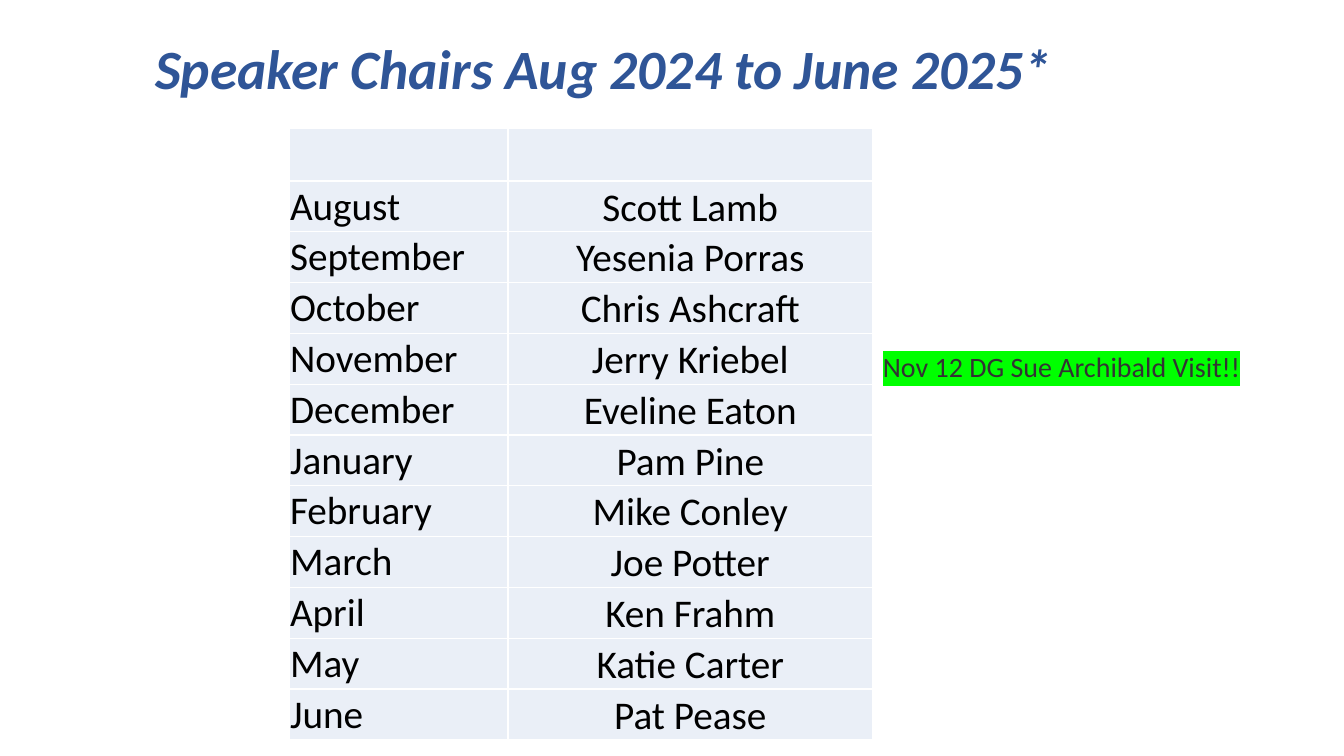
from dataclasses import dataclass

from lxml.etree import SubElement
from pptx import Presentation
from pptx.dml.color import RGBColor
from pptx.enum.text import MSO_ANCHOR, PP_ALIGN
from pptx.oxml.ns import qn
from pptx.util import Cm, Pt


@dataclass(frozen=True)
class Theme:
    """Colours, typeface and type sizes of the slide."""

    font: str = "Calibri"
    title_color: str = "2F5597"
    table_color: str = "000000"
    note_color: str = "333333"
    cell_fill: str = "EAEFF7"
    border: str = "FFFFFF"
    highlight: str = "00FF00"
    title_size: float = 39.6
    table_size: float = 28
    note_size: float = 20


THEME = Theme()

SPEAKER_CHAIRS = [
    ("August", "Scott Lamb"),
    ("September", "Yesenia Porras"),
    ("October", "Chris Ashcraft"),
    ("November", "Jerry Kriebel"),
    ("December", "Eveline Eaton"),
    ("January", "Pam Pine"),
    ("February", "Mike Conley"),
    ("March", "Joe Potter"),
    ("April", "Ken Frahm"),
    ("May", "Katie Carter"),
    ("June", "Pat Pease"),
]


def style_font(font, size, color):
    """Apply the theme typeface with a size and colour."""
    font.name = THEME.font
    font.size = Pt(size)
    font.color.rgb = RGBColor.from_string(color)


def add_text(slide, text, left, top, width, height, size, color):
    """Add a vertically centred text box and return its paragraph."""
    frame = slide.shapes.add_textbox(Cm(left), Cm(top), Cm(width), Cm(height)).text_frame
    frame.word_wrap = True
    frame.vertical_anchor = MSO_ANCHOR.MIDDLE
    paragraph = frame.paragraphs[0]
    paragraph.text = text
    paragraph.line_spacing = 0.9
    style_font(paragraph.font, size, color)
    return paragraph


def highlight_run(run, color):
    """Mark a run with a highlight colour."""
    highlight = SubElement(run.font._element, qn("a:highlight"))
    SubElement(highlight, qn("a:srgbClr"), val=color)


def style_cell(cell):
    """Give a cell its borders and fill."""
    properties = cell._tc.get_or_add_tcPr()
    for side in ("lnL", "lnR", "lnT", "lnB"):
        line = SubElement(properties, qn(f"a:{side}"), w=str(Pt(1)))
        fill = SubElement(line, qn("a:solidFill"))
        SubElement(fill, qn("a:srgbClr"), val=THEME.border)
    cell.fill.solid()
    cell.fill.fore_color.rgb = RGBColor.from_string(THEME.cell_fill)


def fill_cell(cell, text, anchor, alignment):
    """Write one text entry into a cell with tight margins."""
    cell.margin_left = cell.margin_right = cell.margin_top = Cm(0.02)
    cell.margin_bottom = 0
    cell.vertical_anchor = anchor
    paragraph = cell.text_frame.paragraphs[0]
    paragraph.text = text
    paragraph.alignment = alignment
    style_font(paragraph.font, THEME.table_size, THEME.table_color)


def add_chairs_table(slide, chairs):
    """Add the table of months and speaker chairs under an empty header row."""
    table = slide.shapes.add_table(
        len(chairs) + 1, 2, Cm(7.29), Cm(3.23), Cm(14.7), Cm(15.44)
    ).table
    table.first_row = table.horz_banding = False
    for column, width in zip(table.columns, (5.51, 9.19)):
        column.width = Cm(width)
    for index, row in enumerate(table.rows):
        row.height = Cm(1.28 if index else 1.33)
    for cell in table.iter_cells():
        style_cell(cell)
    for index, (month, chair) in enumerate(chairs, start=1):
        fill_cell(table.cell(index, 0), month, MSO_ANCHOR.MIDDLE, PP_ALIGN.LEFT)
        fill_cell(table.cell(index, 1), chair, MSO_ANCHOR.BOTTOM, PP_ALIGN.CENTER)


def main():
    """Build the speaker chairs slide and save it."""
    presentation = Presentation()
    presentation.slide_width = Cm(33.87)
    presentation.slide_height = Cm(19.05)
    slide = presentation.slides.add_slide(presentation.slide_layouts[6])

    title = add_text(slide, "Speaker Chairs Aug 2024 to June 2025*",
                     3.66, 0.46, 24.66, 2.69, THEME.title_size, THEME.title_color)
    title.font.bold = title.font.italic = True

    add_chairs_table(slide, SPEAKER_CHAIRS)

    note = add_text(slide, "Nov 12 DG Sue Archibald Visit!!",
                    22, 8.38, 9.58, 1.83, THEME.note_size, THEME.note_color)
    highlight_run(note.runs[0], THEME.highlight)

    presentation.save("out.pptx")


if __name__ == "__main__":
    main()
